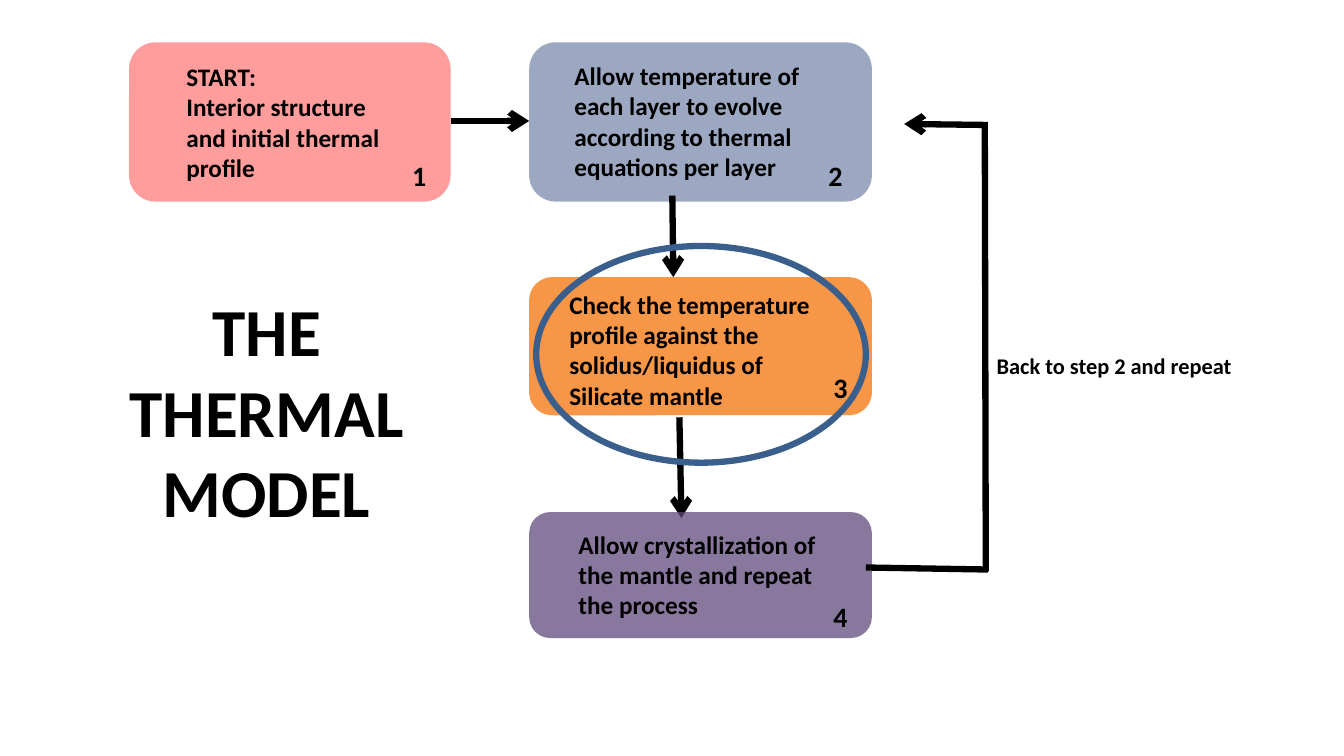
from lxml import etree
from pptx import Presentation
from pptx.dml.color import RGBColor
from pptx.enum.shapes import MSO_CONNECTOR, MSO_SHAPE
from pptx.enum.text import MSO_ANCHOR, PP_ALIGN
from pptx.oxml.ns import qn
from pptx.util import Inches, Pt

ROUNDED = MSO_SHAPE.ROUNDED_RECTANGLE
OVAL = MSO_SHAPE.OVAL
STRAIGHT = MSO_CONNECTOR.STRAIGHT
MIDDLE = MSO_ANCHOR.MIDDLE
CENTER = PP_ALIGN.CENTER

SLIDE_WIDTH, SLIDE_HEIGHT = Inches(13.33), Inches(7.5)
COLUMN, ROW = SLIDE_WIDTH / 40, SLIDE_HEIGHT / 30
LINE_WIDTH = Pt(4.5)

COLORS = {
    "ink": "000000",
    "start": "FF0000",
    "evolve": "002060",
    "check": "F79646",
    "crystallize": "604A7B",
    "highlight": "3A5F8C",
}

STEP_LEFT, STEP_WIDTH = 15.75, 10.2
NUMBER_SIZE = (1.11, 1.76)

# Frames are left, top, width, height in columns and rows.
STEPS = [
    {"color": "start", "opacity": 39, "frame": (3.84, 1.68, 9.57, 6.32),
     "text": "START:\vInterior structure and initial thermal profile",
     "text_frame": (5.25, 2.24, 6.36, 5.24), "number_at": (11.97, 6.08)},
    {"color": "evolve", "opacity": 39, "frame": (STEP_LEFT, 1.68, STEP_WIDTH, 6.32),
     "text": "Allow temperature of each layer to evolve according to thermal "
             "equations per layer",
     "text_frame": (16.8, 2.2, 8.16, 5.24), "number_at": (24.36, 6.08)},
    {"color": "check", "opacity": 100, "frame": (STEP_LEFT, 11, STEP_WIDTH, 5.48),
     "text": "Check the temperature profile against the solidus/liquidus of "
             "Silicate mantle",
     "text_frame": (16.65, 11.28, 8.7, 5.24), "number_at": (24.51, 14.52)},
    {"color": "crystallize", "opacity": 74, "frame": (STEP_LEFT, 20.32, STEP_WIDTH, 5),
     "text": "Allow crystallization of the mantle and repeat the process",
     "text_frame": (16.92, 20.8, 8.16, 4.04), "number_at": (24.51, 23.6)},
]

# Start column and row, end column and row, arrowhead at the end.
STEP_ARROWS = [
    (13.41, 4.8, 15.75, 4.8, True),
    (20.01, 7.76, 20.04, 11, True),
    (20.22, 16.56, 20.28, 20.56, True),
]
RETURN_PATH = [
    (29.4, 22.6, 25.77, 22.52, False),
    (29.31, 5, 29.34, 22.68, False),
    (29.4, 4.96, 26.91, 4.92, True),
]


def grid(left, top, width, height):
    """Turn columns and rows into slide lengths."""
    return (round(left * COLUMN), round(top * ROW),
            round(width * COLUMN), round(height * ROW))


def color(name):
    return RGBColor.from_string(COLORS[name])


def format_text(frame, text, size):
    frame.word_wrap = True
    para = frame.paragraphs[0]
    para.text = text
    for span in para.runs:
        for name, value in {"name": "Calibri", "size": Pt(size), "bold": True}.items():
            setattr(span.font, name, value)
        span.font.color.rgb = color("ink")
    return para


def add_text(page, frame, text, size):
    box = page.shapes.add_textbox(*grid(*frame))
    format_text(box.text_frame, text, size)


def add_title(page, frame, text):
    title = page.shapes.title
    title.left, title.top, title.width, title.height = grid(*frame)
    title.text_frame.vertical_anchor = MIDDLE
    format_text(title.text_frame, text, 48).alignment = CENTER


def add_step(page, number, step):
    box = page.shapes.add_shape(ROUNDED, *grid(*step["frame"]))
    box.shadow.inherit = False
    box.line.fill.background()
    box.fill.solid()
    box.fill.fore_color.rgb = color(step["color"])
    if step["opacity"] < 100:
        shade = box.fill._xPr.find(".//" + qn("a:srgbClr"))
        etree.SubElement(shade, qn("a:alpha"), val=str(step["opacity"] * 1000))
    add_text(page, step["text_frame"], step["text"], 18)
    add_text(page, step["number_at"] + NUMBER_SIZE, str(number), 20)


def add_line(page, start_column, start_row, end_column, end_row, has_head):
    line = page.shapes.add_connector(
        STRAIGHT, *grid(start_column, start_row, end_column, end_row))
    line.line.width = LINE_WIDTH
    line.line.color.rgb = color("ink")
    if has_head:
        etree.SubElement(line.line._get_or_add_ln(), qn("a:tailEnd"), type="arrow")
    etree.SubElement(line._element.spPr, qn("a:effectLst"))


def add_highlight(page, frame):
    ring = page.shapes.add_shape(OVAL, *grid(*frame))
    ring.shadow.inherit = False
    ring.fill.background()
    ring.line.color.rgb = color("highlight")
    ring.line.width = LINE_WIDTH


def main():
    deck = Presentation()
    deck.slide_width, deck.slide_height = SLIDE_WIDTH, SLIDE_HEIGHT
    page = deck.slides.add_slide(deck.slide_layouts.get_by_name("Title Only"))

    add_title(page, (2.04, 11.28, 11.79, 10), "THE THERMAL MODEL")
    for number, step in enumerate(STEPS, start=1):
        if number == len(STEPS):  # the last step lies over the arrow tips
            for arrow in STEP_ARROWS:
                add_line(page, *arrow)
        add_step(page, number, step)
    for segment in RETURN_PATH:
        add_line(page, *segment)
    add_text(page, (29.37, 13.76, 8.01, 1.48), "Back to step 2 and repeat", 16)
    add_highlight(page, (15.96, 9.76, 9.81, 8.6))

    deck.save("out.pptx")


if __name__ == "__main__":
    main()
